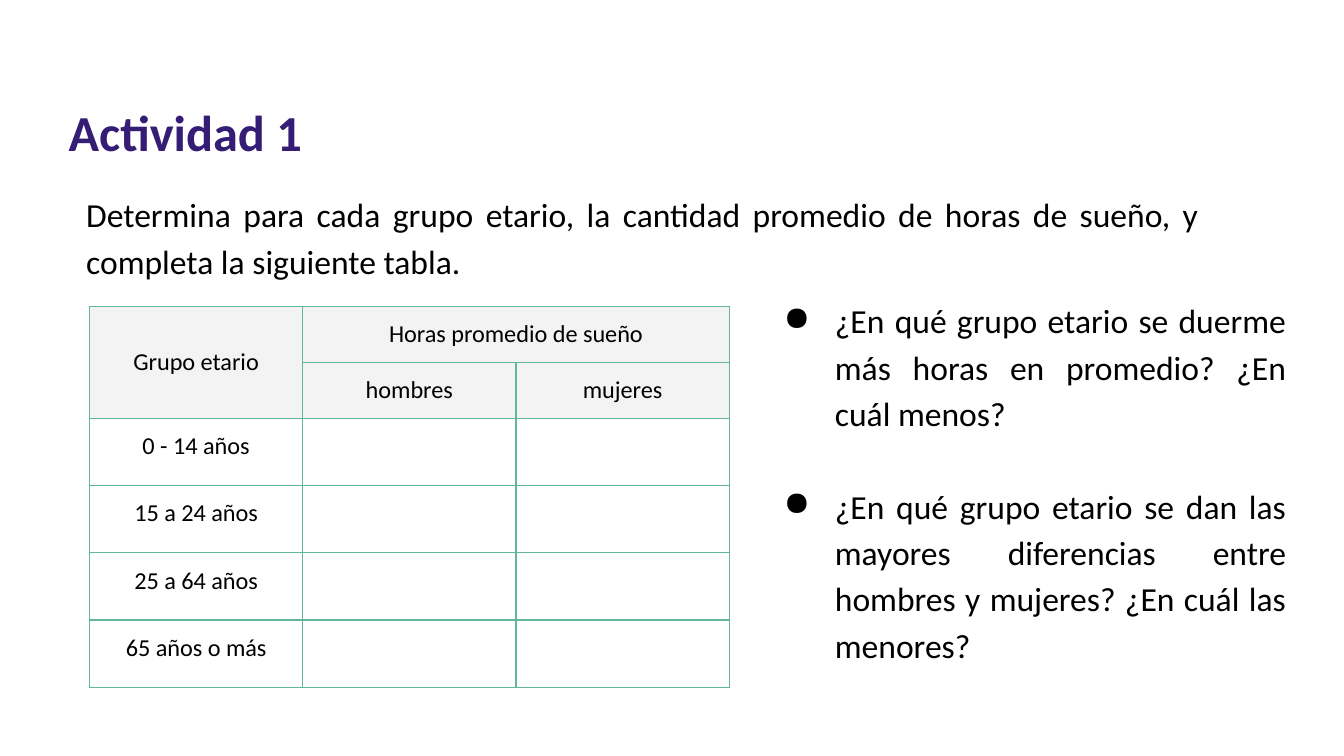
"""Builds the slide "Actividad 1" with a sleep-hours table and two questions."""
from dataclasses import dataclass

import lxml.etree
import pptx
import pptx.dml.color
import pptx.enum.text
import pptx.oxml
import pptx.oxml.ns
import pptx.util

Cm = pptx.util.Cm
Pt = pptx.util.Pt
ALIGN = pptx.enum.text.PP_ALIGN
ANCHOR = pptx.enum.text.MSO_ANCHOR
qn = pptx.oxml.ns.qn

COLORS = {"text": "000000", "title": "351C75", "header": "F3F3F3", "border": "63B799"}
FONT = "Calibri"
AGE_GROUPS = ["0 - 14 años", "15 a 24 años", "25 a 64 años", "65 años o más"]
HEADER_ROWS = [
    ["Grupo etario", "Horas promedio de sueño", ""],
    ["", "hombres", "mujeres"],
]
HEADER_HEIGHT, BODY_HEIGHT = 1.06, 1.27
COLUMN_WIDTH = 4.03


@dataclass
class TextBlock:
    """Text box with its place in centimetres and its style."""
    left: float
    top: float
    width: float
    height: float
    paragraphs: list[str]
    size: float = 18
    color: str = "text"
    bold: bool = False
    align: ALIGN = ALIGN.JUSTIFY
    spacing: float = 1.15
    bulleted: bool = False
    gap: float = 0


BLOCKS = [
    TextBlock(1.45, 3.38, 21.39, 2.03, [
        "Determina para cada grupo etario, la cantidad promedio de horas de sueño, "
        "y completa la siguiente tabla.",
    ]),
    TextBlock(1.12, 1.73, 22.81, 1.55, ["Actividad 1"], size=27, color="title",
              bold=True, align=ALIGN.LEFT, spacing=1),
    TextBlock(14.33, 5.38, 10.16, 7.34, [
        "¿En qué grupo etario se duerme más horas en promedio? ¿En cuál menos?",
        "¿En qué grupo etario se dan las mayores diferencias entre hombres y mujeres? "
        "¿En cuál las menores?",
    ], bulleted=True, gap=24.8),
]


def style_runs(para, size: float, color: str, bold: bool = False) -> None:
    """Format every run of a paragraph."""
    for span in para.runs:
        span.font.name = FONT
        span.font.size = Pt(size)
        span.font.bold = bold
        span.font.color.rgb = pptx.dml.color.RGBColor.from_string(COLORS[color])


def add_bullet(para) -> None:
    """Give a paragraph a round black bullet and a hanging indent."""
    properties = para._p.get_or_add_pPr()
    properties.set("marL", str(Cm(1.27)))
    properties.set("indent", str(Cm(-0.97)))
    bullet_color = lxml.etree.SubElement(properties, qn("a:buClr"))
    lxml.etree.SubElement(bullet_color, qn("a:srgbClr"), val=COLORS["text"])
    lxml.etree.SubElement(properties, qn("a:buChar"), char="●")


def draw_text(page, block: TextBlock) -> None:
    """Draw one text box."""
    box = page.shapes.add_textbox(Cm(block.left), Cm(block.top),
                                  Cm(block.width), Cm(block.height))
    frame = box.text_frame
    frame.word_wrap = True
    frame.margin_left = frame.margin_right = Cm(0.18)
    frame.margin_top = frame.margin_bottom = Cm(0.18)
    frame.text = "\n".join(block.paragraphs)
    for index, para in enumerate(frame.paragraphs):
        if block.bulleted:
            add_bullet(para)
        para.alignment = block.align
        para.line_spacing = block.spacing
        if index:
            para.space_before = Pt(block.gap)
        style_runs(para, block.size, block.color, block.bold)


def draw_borders(cell) -> None:
    """Draw the four borders of a cell."""
    properties = cell._tc.get_or_add_tcPr()
    for side in ("a:lnL", "a:lnR", "a:lnT", "a:lnB"):
        line = lxml.etree.SubElement(properties, qn(side), w=str(Pt(0.75)))
        fill = lxml.etree.SubElement(line, qn("a:solidFill"))
        lxml.etree.SubElement(fill, qn("a:srgbClr"), val=COLORS["border"])


def style_cell(cell, text: str, is_header: bool) -> None:
    """Write and format one table cell."""
    draw_borders(cell)
    cell.margin_left = cell.margin_right = Cm(0.25)
    cell.margin_top = cell.margin_bottom = Cm(0.25)
    if is_header:
        cell.fill.solid()
        cell.fill.fore_color.rgb = pptx.dml.color.RGBColor.from_string(COLORS["header"])
        cell.vertical_anchor = ANCHOR.MIDDLE
    else:
        cell.fill.background()
    if text:
        cell.text_frame.text = text
        para = cell.text_frame.paragraphs[0]
        para.alignment = ALIGN.CENTER
        style_runs(para, 13, "text")


def draw_table(page) -> None:
    """Draw the table of sleep hours by age group."""
    rows = HEADER_ROWS + [[group, "", ""] for group in AGE_GROUPS]
    heights = [HEADER_HEIGHT] * len(HEADER_ROWS) + [BODY_HEIGHT] * len(AGE_GROUPS)
    columns = len(rows[0])
    table = page.shapes.add_table(len(rows), columns, Cm(1.69), Cm(5.79),
                                  Cm(COLUMN_WIDTH * columns), Cm(sum(heights))).table
    table.first_row = table.horz_banding = False
    for column in table.columns:
        column.width = Cm(COLUMN_WIDTH)
    for row_index, (texts, height) in enumerate(zip(rows, heights)):
        table.rows[row_index].height = Cm(height)
        for column_index, text in enumerate(texts):
            style_cell(table.cell(row_index, column_index), text,
                       row_index < len(HEADER_ROWS))
    table.cell(0, 0).merge(table.cell(1, 0))
    table.cell(0, 1).merge(table.cell(0, 2))


def main() -> None:
    """Build and save the deck."""
    deck = pptx.Presentation()
    deck.slide_width, deck.slide_height = Cm(25.4), Cm(14.29)
    page = deck.slides.add_slide(deck.slide_layouts[6])
    for block in BLOCKS:
        draw_text(page, block)
    draw_table(page)
    deck.save("out.pptx")


if __name__ == "__main__":
    main()
